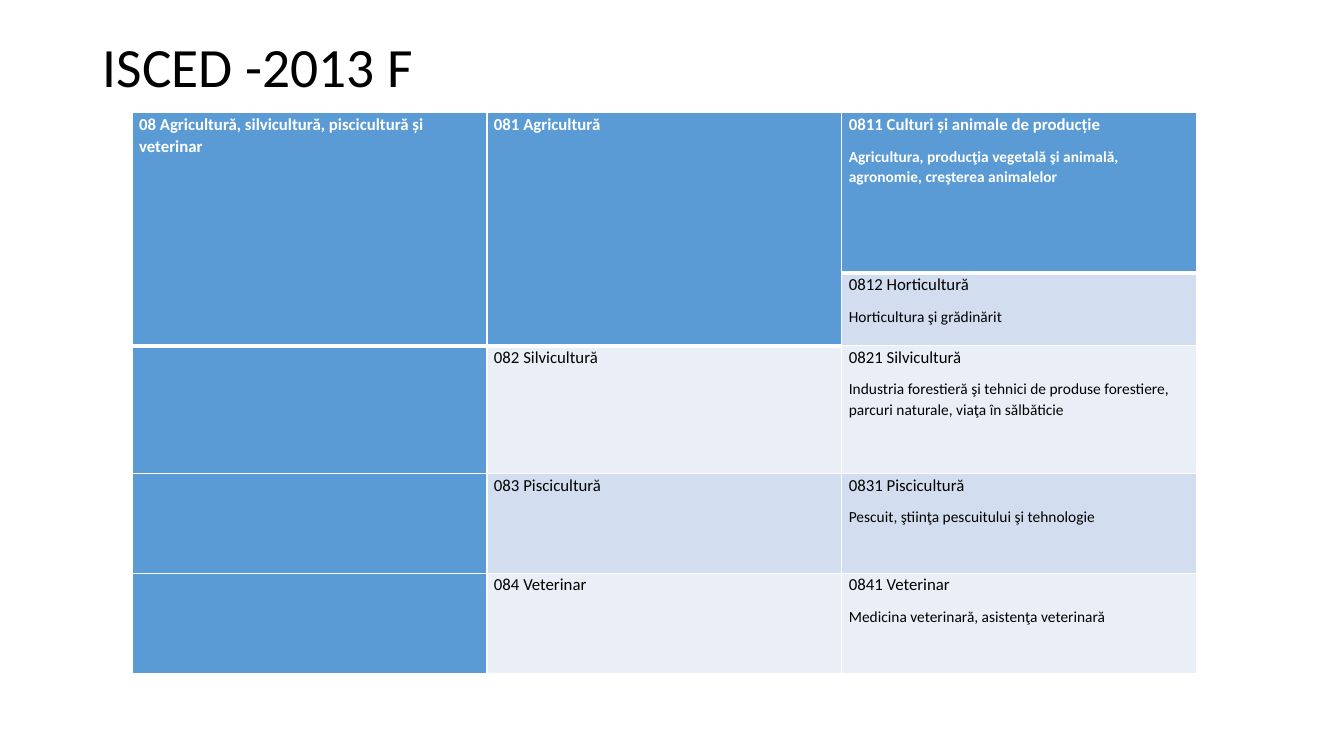
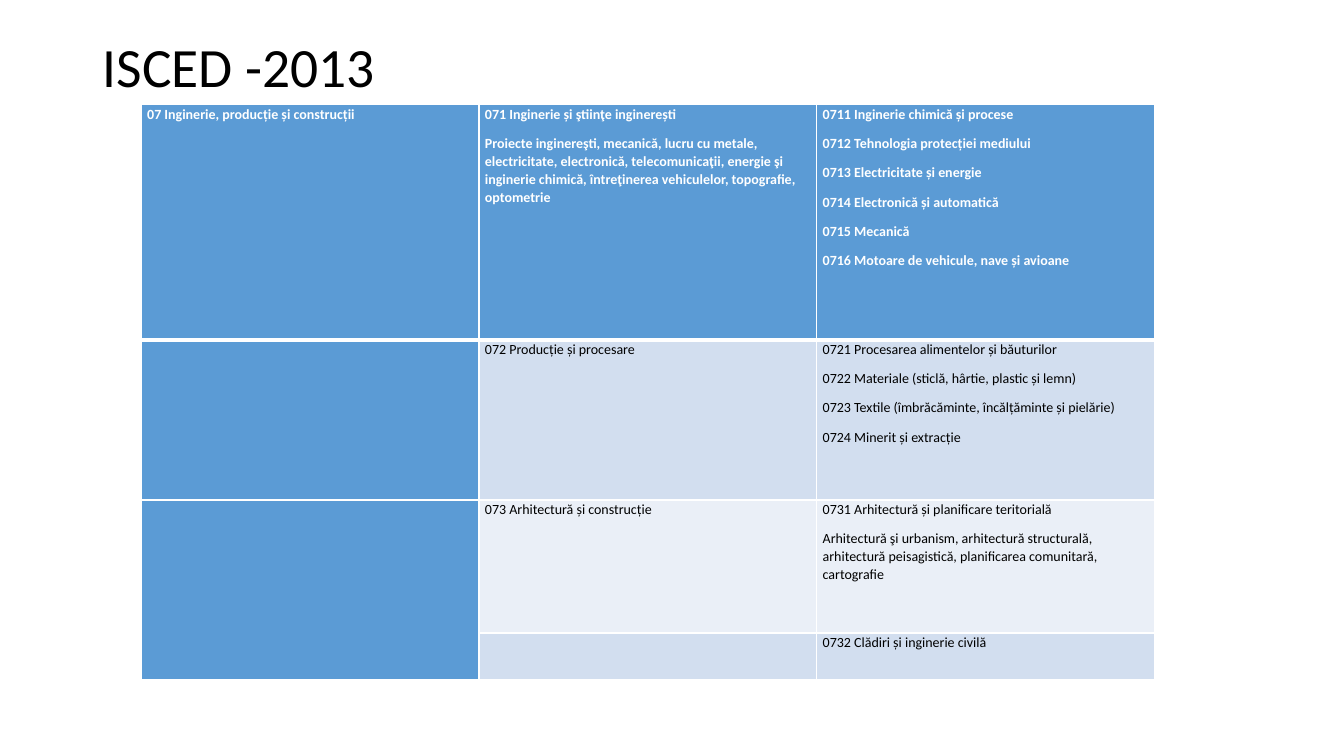
import dataclasses

import pptx
import pptx.dml.color
import pptx.enum.text
import pptx.oxml.ns
import pptx.presentation
import pptx.slide
import pptx.table
import pptx.text.text
import pptx.util
from lxml import etree

SCALE = 9144  # EMU in one px, 100 px to the inch


@dataclasses.dataclass(frozen=True)
class Theme:
    font: str = "Calibri"
    blue: str = "5B9BD5"
    mid: str = "D2DEEF"
    pale: str = "EAEFF7"
    white: str = "FFFFFF"
    black: str = "000000"
    title: float = 39.6
    lead: float = 0.9
    space: float = 1.07
    after: int = 8
    thin: int = 1
    thick: int = 3


@dataclasses.dataclass(frozen=True)
class Cell:
    lines: tuple[str, ...] = ()
    span: int = 1


@dataclasses.dataclass(frozen=True)
class Page:
    title: str
    left: int
    top: int
    width: int  # of one column
    rows: tuple[int, ...]
    inset: int
    head: int  # type size of the first line in a cell
    body: int  # type size of the lines below it
    cells: tuple[tuple[Cell | None, ...], ...]  # None lies under a span


THEME = Theme()
BARE = Cell()

PAGES = (
    Page(
        "ISCED -2013 F", 131, 112, 352, (159, 72, 127, 99, 99), 7, 12, 11,
        (
            (
                Cell(("08 Agricultură, silvicultură, piscicultură și veterinar",), 2),
                Cell(("081 Agricultură",), 2),
                Cell((
                    "0811 Culturi și animale de producție",
                    "Agricultura, producţia vegetală şi animală, agronomie, "
                    "creşterea animalelor",
                )),
            ),
            (None, None, Cell(("0812 Horticultură", "Horticultura şi grădinărit"))),
            (
                BARE,
                Cell(("082 Silvicultură",)),
                Cell((
                    "0821 Silvicultură",
                    "Industria forestieră şi tehnici de produse forestiere, "
                    "parcuri naturale, viaţa în sălbăticie",
                )),
            ),
            (
                BARE,
                Cell(("083 Piscicultură",)),
                Cell(("0831 Piscicultură", "Pescuit, ştiinţa pescuitului şi tehnologie")),
            ),
            (
                BARE,
                Cell(("084 Veterinar",)),
                Cell(("0841 Veterinar", "Medicina veterinară, asistenţa veterinară")),
            ),
        ),
    ),
    Page(
        "ISCED -2013", 140, 104, 335, (233, 159, 132, 46), 6, 10, 10,
        (
            (
                Cell(("07 Inginerie, producție și construcții",)),
                Cell((
                    "071 Inginerie și ştiinţe inginerești",
                    "Proiecte inginereşti, mecanică, lucru cu metale, electricitate, "
                    "electronică, telecomunicaţii, energie şi inginerie chimică, "
                    "întreţinerea vehiculelor, topografie, optometrie",
                )),
                Cell((
                    "0711 Inginerie chimică și procese",
                    "0712 Tehnologia protecției mediului",
                    "0713 Electricitate și energie",
                    "0714 Electronică și automatică",
                    "0715 Mecanică",
                    "0716 Motoare de vehicule, nave și avioane",
                )),
            ),
            (
                BARE,
                Cell(("072 Producție și procesare",)),
                Cell((
                    "0721 Procesarea alimentelor și băuturilor",
                    "0722 Materiale (sticlă, hârtie, plastic și lemn)",
                    "0723 Textile (îmbrăcăminte, încălțăminte și pielărie)",
                    "0724 Minerit și extracție",
                )),
            ),
            (
                Cell(span=2),
                Cell(("073 Arhitectură și construcție",)),
                Cell((
                    "0731 Arhitectură și planificare teritorială",
                    "Arhitectură şi urbanism, arhitectură structurală, arhitectură "
                    "peisagistică, planificarea comunitară, cartografie",
                )),
            ),
            (None, BARE, Cell(("0732 Clădiri și inginerie civilă",))),
        ),
    ),
)


def px(count: int) -> pptx.util.Emu:
    return pptx.util.Emu(count * SCALE)


def tint(code: str) -> pptx.dml.color.RGBColor:
    return pptx.dml.color.RGBColor.from_string(code)


def add_run(para: pptx.text.text._Paragraph, text: str, size: float,
            shade: str, bold: bool = False) -> None:
    run = para.add_run()
    run.text = text
    run.font.name = THEME.font
    run.font.size = pptx.util.Pt(size)
    run.font.bold = bold
    run.font.color.rgb = tint(shade)


def add_title(slide: pptx.slide.Slide, text: str) -> None:
    frame = slide.shapes.add_textbox(px(92), px(40), px(1150), px(58)).text_frame
    frame.word_wrap = True
    frame.vertical_anchor = pptx.enum.text.MSO_ANCHOR.MIDDLE
    para = frame.paragraphs[0]
    para.line_spacing = THEME.lead
    add_run(para, text, THEME.title, THEME.black)


def add_edges(box: pptx.table._Cell, over: int, under: int) -> None:
    """Draw the four white edges; over and under are widths in points."""
    props = box._tc.get_or_add_tcPr()
    name = pptx.oxml.ns.qn
    for side, width in (("L", THEME.thin), ("R", THEME.thin), ("T", over), ("B", under)):
        edge = etree.SubElement(props, name(f"a:ln{side}"), w=str(pptx.util.Pt(width)))
        fill = etree.SubElement(edge, name("a:solidFill"))
        etree.SubElement(fill, name("a:srgbClr"), val=THEME.white)


def fill_cell(box: pptx.table._Cell, cell: Cell, page: Page, first: bool) -> None:
    box.margin_left = box.margin_right = px(page.inset)
    box.margin_top = box.margin_bottom = 0
    frame = box.text_frame
    for rank, line in enumerate(cell.lines):
        para = frame.add_paragraph() if rank else frame.paragraphs[0]
        para.line_spacing = THEME.space
        para.space_after = pptx.util.Pt(THEME.after)
        add_run(para, line, page.body if rank else page.head,
                THEME.white if first else THEME.black, first)


def add_grid(slide: pptx.slide.Slide, page: Page) -> None:
    count = len(page.cells[0])
    grid = slide.shapes.add_table(
        len(page.rows), count, px(page.left), px(page.top),
        px(page.width * count), px(sum(page.rows))).table
    grid.first_row = grid.horz_banding = False
    for col in grid.columns:
        col.width = px(page.width)
    for row, height in zip(grid.rows, page.rows):
        row.height = px(height)

    for r, line in enumerate(page.cells):
        for c, cell in enumerate(line):
            box = grid.cell(r, c)
            # A thick edge parts the heading row from the rows below it
            last = page.cells[0][c].span
            add_edges(box, THEME.thick if r == last else THEME.thin,
                      THEME.thick if r == last - 1 else THEME.thin)
            # Blue heads on top and at left, then bands in turn
            band = THEME.mid if r % 2 else THEME.pale
            box.fill.solid()
            box.fill.fore_color.rgb = tint(THEME.blue if r == 0 or c == 0 else band)
            if cell is None:
                continue
            if cell.span > 1:
                box.merge(grid.cell(r + cell.span - 1, c))
            fill_cell(box, cell, page, r == 0)


def add_page(deck: pptx.presentation.Presentation, page: Page) -> None:
    slide = deck.slides.add_slide(deck.slide_layouts[6])
    add_title(slide, page.title)
    add_grid(slide, page)


def main() -> None:
    deck = pptx.Presentation()
    deck.slide_width, deck.slide_height = px(1333), px(750)
    for page in PAGES:
        add_page(deck, page)
    deck.save("out.pptx")


if __name__ == "__main__":
    main()
